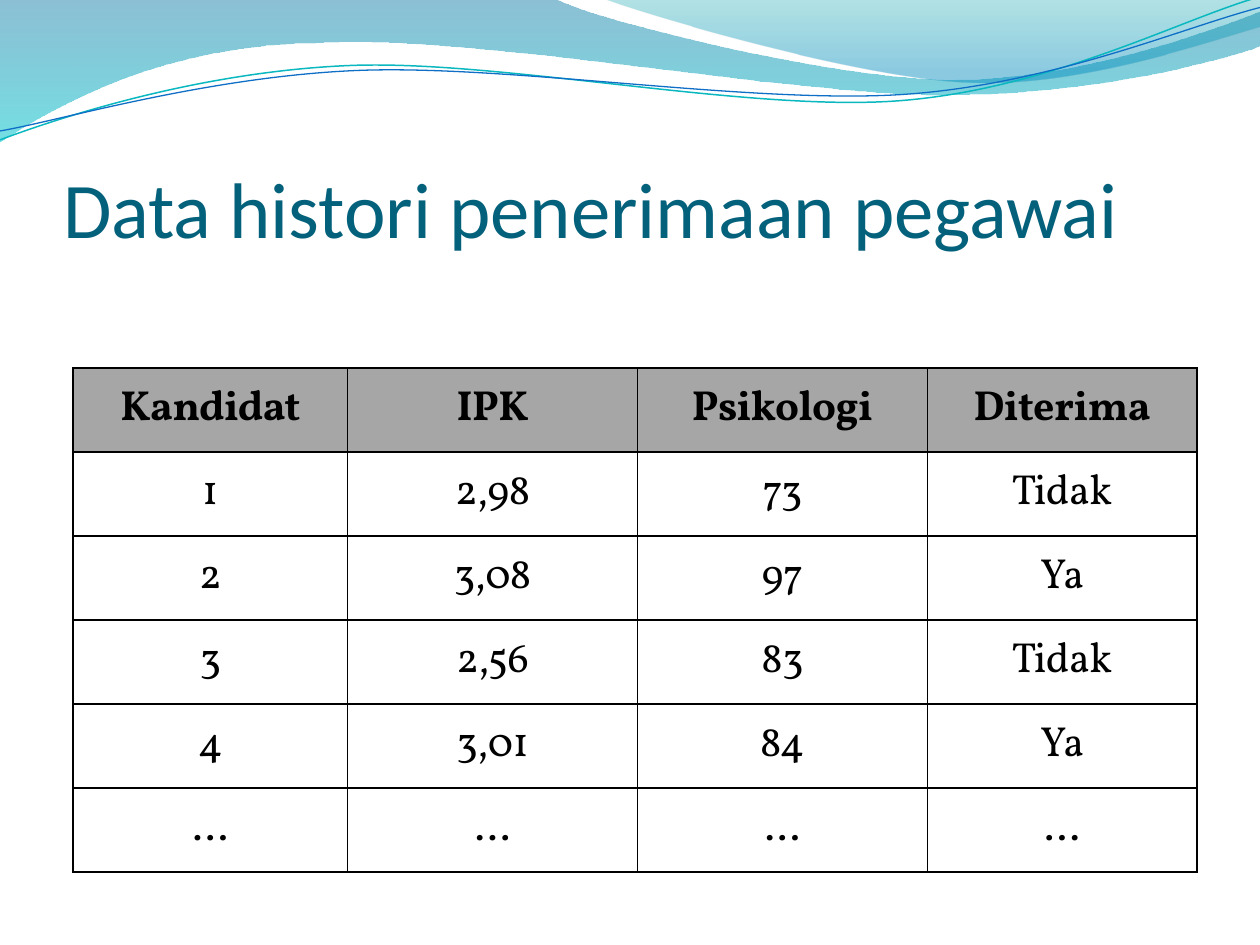
from math import cos, radians, sin

from lxml import etree
from pptx import Presentation
from pptx.dml.color import RGBColor
from pptx.enum.text import MSO_ANCHOR, PP_ALIGN
from pptx.oxml.ns import qn
from pptx.util import Inches, Pt

LEFT, CENTER = PP_ALIGN.LEFT, PP_ALIGN.CENTER
MIDDLE, BOTTOM = MSO_ANCHOR.MIDDLE, MSO_ANCHOR.BOTTOM
BLACK = RGBColor(0x00, 0x00, 0x00)
GRAY = RGBColor(0xA6, 0xA6, 0xA6)
NAVY = RGBColor(0x04, 0x61, 0x7B)
BLUE = RGBColor(0x0F, 0x6F, 0xC6)
TEAL = RGBColor(0x0A, 0xB8, 0xBF)
DEEP = RGBColor(0x00, 0x74, 0xA1)
CYAN = RGBColor(0x00, 0xC6, 0xCF)
SEA = RGBColor(0x00, 0xA1, 0xA9)
SKY = RGBColor(0x00, 0x8B, 0xBF)

TITLE = "Data histori penerimaan pegawai"
ROWS = [
    ("Kandidat", "IPK", "Psikologi", "Diterima"),
    ("1", "2,98", "73", "Tidak"),
    ("2", "3,08", "97", "Ya"),
    ("3", "2,56", "83", "Tidak"),
    ("4", "3,01", "84", "Ya"),
    ("...", "...", "...", "..."),
]
WIDTHS = (2.18, 2.3, 2.3, 2.14)
HEIGHT = 4

WAVES = [
    ([[(0, -0.01)], [(4.4, -0.01)],
      [(4.76, 0.17), (6.64, 0.63), (7.58, 0.63)],
      [(8.53, 0.63), (9.58, 0.26), (10, 0.09)], [(10.01, 0.36)],
      [(9.83, 0.44), (8.7, 0.76), (7.46, 0.75)],
      [(6.22, 0.75), (3.82, 0.28), (2.57, 0.34)],
      [(1.29, 0.35), (0.46, 0.83), (-0.01, 1.13)], [(0, -0.01)]],
     [(0, DEEP, 45), (1, CYAN, 55)]),
    ([[(4.79, -0.01)],
      [(5.09, 0.11), (6.82, 0.62), (7.69, 0.65)],
      [(8.56, 0.69), (9.61, 0.32), (10, 0.21)],
      [(10, 0)], [(4.79, -0.01)]],
     [(0, SEA, 30), (0.8, SKY, 45)]),
]
TILT = -2.7
LINES = [
    ([[(0, 1.11)], [(0.48, 0.93), (1.58, 0.57), (2.77, 0.52)],
      [(3.95, 0.47), (5.93, 0.89), (7.13, 0.8)],
      [(8.33, 0.71), (9.38, 0.15), (9.98, -0.02)]],
     (4.99, 0.58), TEAL, 0.85),
    ([[(0, 1.04)], [(0.47, 0.96), (1.64, 0.61), (2.83, 0.56)],
      [(4.03, 0.51), (5.97, 0.83), (7.17, 0.75)],
      [(8.36, 0.67), (9.41, 0.21), (10, 0.06)]],
     (5, 0.59), BLUE, 0.75),
]


def turn(point, mid, angle):
    x, y = point[0] - mid[0], point[1] - mid[1]
    c, s = cos(radians(angle)), sin(radians(angle))
    return mid[0] + x * c - y * s, mid[1] + x * s + y * c


def draw(slide, parts, close):
    pts = [(Inches(x), Inches(y)) for part in parts for x, y in part]
    pen = slide.shapes.build_freeform(*pts[0], scale=1.0)
    pen.add_line_segments(pts[1:], close=close)
    shape = pen.convert_to_shape()
    shape.shadow.inherit = False
    nodes = iter(list(shape._element.spPr.iter(qn("a:lnTo"))))
    for part in parts[1:]:
        group = [next(nodes) for _ in part]
        if len(group) == 3:
            curve = etree.Element(qn("a:cubicBezTo"))
            group[0].addprevious(curve)
            for node in group:
                curve.append(node[0])
                node.getparent().remove(node)
    return shape


def add_wave(slide, parts, stops):
    shape = draw(slide, parts, True)
    shape.line.fill.background()
    shape.fill.gradient()
    shape.fill.gradient_angle = 270
    for stop, (pos, color, _) in zip(shape.fill.gradient_stops, stops):
        stop.position = pos
        stop.color.rgb = color
    for node, (_, _, alpha) in zip(shape._element.spPr.iter(qn("a:srgbClr")), stops):
        etree.SubElement(node, qn("a:alpha"), val=str(alpha * 1000))


def add_line(slide, parts, mid, color, width):
    flat = [[turn(point, mid, -TILT) for point in part] for part in parts]
    shape = draw(slide, flat, False)
    shape.rotation = TILT
    shape.fill.background()
    shape.line.color.rgb = color
    shape.line.width = Pt(width)


def put_text(frame, text, size, font, color, bold=False, align=LEFT, before=0, spacing=0):
    para = frame.paragraphs[0]
    para.alignment = align
    para.space_before = Pt(before)
    run = para.add_run()
    run.text = text
    run.font.size = Pt(size)
    run.font.name = font
    run.font.bold = bold
    run.font.color.rgb = color
    if spacing:
        run._r.get_or_add_rPr().set("spc", str(round(spacing * 100)))


def add_edges(cell):
    props = cell._tc.get_or_add_tcPr()
    for side in ("lnL", "lnR", "lnT", "lnB"):
        edge = etree.SubElement(props, qn("a:" + side), w=str(Pt(1)))
        fill = etree.SubElement(edge, qn("a:solidFill"))
        etree.SubElement(fill, qn("a:srgbClr"), val=str(BLACK))


def add_title(slide):
    box = slide.shapes.add_textbox(Inches(0.5), Inches(0.77), Inches(9.08), Inches(1.25))
    frame = box.text_frame
    frame.word_wrap = True
    frame.vertical_anchor = BOTTOM
    frame.margin_left = frame.margin_right = frame.margin_bottom = 0
    frame.margin_top = Inches(0.05)
    put_text(frame, TITLE, 45, "Calibri", NAVY)


def add_grid(slide):
    table = slide.shapes.add_table(
        len(ROWS), len(WIDTHS), Inches(0.58), Inches(2.92),
        Inches(sum(WIDTHS)), Inches(HEIGHT)).table
    table.first_row = table.horz_banding = False
    for col, width in zip(table.columns, WIDTHS):
        col.width = Inches(width)
    for r, row in enumerate(ROWS):
        table.rows[r].height = Inches(HEIGHT / len(ROWS))
        for c, text in enumerate(row):
            cell = table.cell(r, c)
            cell.vertical_anchor = MIDDLE
            cell.margin_left = cell.margin_right = Inches(0.07)
            cell.margin_top = cell.margin_bottom = 0
            add_edges(cell)
            if r == 0:
                cell.fill.solid()
                cell.fill.fore_color.rgb = GRAY
            else:
                cell.fill.background()
            put_text(cell.text_frame, text, 24, "Vollkorn", BLACK, bold=r == 0,
                     align=CENTER, before=3, spacing=-0.3)


def main():
    deck = Presentation()
    deck.slide_width, deck.slide_height = Inches(10), Inches(7.5)
    slide = deck.slides.add_slide(deck.slide_layouts[6])
    for wave in WAVES:
        add_wave(slide, *wave)
    for line in LINES:
        add_line(slide, *line)
    add_title(slide)
    add_grid(slide)
    deck.save("out.pptx")


if __name__ == "__main__":
    main()
